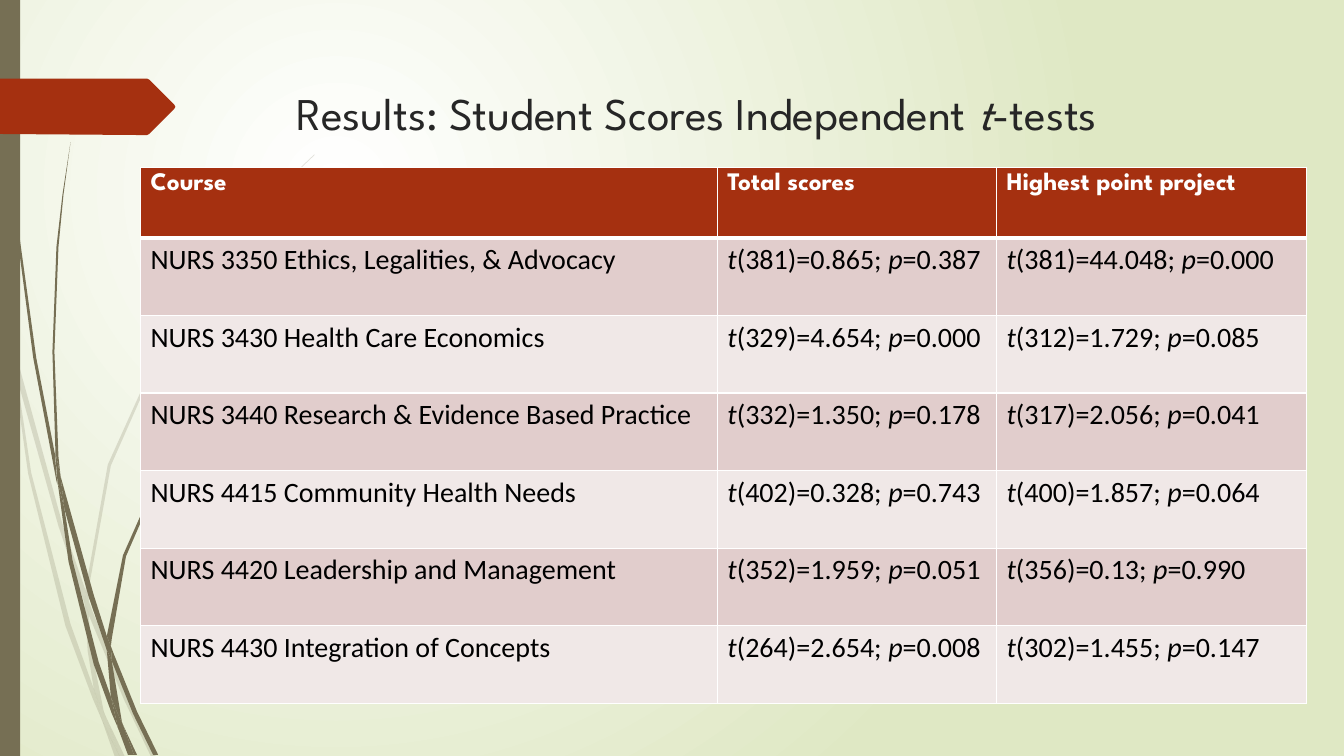
from lxml.etree import SubElement
from pptx import Presentation
from pptx.dml.color import RGBColor
from pptx.enum.shapes import MSO_SHAPE as SHAPE
from pptx.enum.text import MSO_ANCHOR as ANCHOR
from pptx.oxml.ns import qn
from pptx.util import Pt

OLIVE, RUST, WHITE = "766F54", "A53010", "FFFFFF"
BANDS = ["E1CDCC", "F0E8E7"]
HEADING_FONT, BODY_FONT = "League Spartan", "Calibri"
GRID = 0.72

PALE_BLADES = [
    [(11, 350), (9, 322), (0, 282), (0, 299), (10, 344)],
    [(58, 522), (84, 599), (85, 586), (62, 520), (14, 345), (17, 376)],
    [(92, 607), (88, 596), (88, 610), (123, 694), (150, 751), (155, 751), (127, 692)],
    [(119, 751), (124, 751), (105, 711)],
    [(93, 683), (70, 619), (31, 469), (17, 376), (11, 350), (28, 470), (65, 621),
     (92, 693), (101, 714), (99, 707)],
    [(84, 599), (87, 646), (93, 683), (96, 692), (105, 711), (103, 706), (91, 646),
     (88, 610), (88, 608)],
    [(88, 584), (110, 462), (160, 349), (229, 245), (268, 198), (290, 175), (312, 154),
     (312, 153), (289, 175), (268, 197), (228, 244), (158, 348), (107, 461), (85, 584),
     (85, 586), (88, 596)],
    [(101, 714), (114, 751), (119, 751)],
    [(88, 608), (88, 610), (88, 596), (85, 586), (84, 599)],
    [(96, 692), (93, 683), (99, 707), (101, 714), (119, 751), (105, 711)],
]

DARK_BLADES = [
    [(7, 110), (17, 233), (33, 355), (56, 477), (57, 481), (55, 457), (55, 453),
     (36, 355), (19, 232), (8, 109), (5, 48), (4, 0), (3, 0), (4, 48)],
    [(88, 592), (106, 645), (106, 633), (106, 631), (93, 590), (60, 472), (64, 505)],
    [(113, 649), (110, 641), (111, 656), (132, 708), (152, 749), (157, 749), (136, 706)],
    [(110, 691), (98, 657), (72, 556), (64, 505), (57, 477), (68, 557), (93, 659),
     (111, 708), (117, 722), (116, 717)],
    [(60, 472), (58, 453), (54, 349), (58, 245), (63, 193), (70, 141), (62, 193),
     (56, 245), (52, 349), (55, 449)],
    [(133, 749), (136, 749), (122, 719)],
    [(57, 477), (64, 505), (60, 472), (55, 449), (55, 453)],
    [(111, 633), (125, 552), (158, 476), (205, 406), (231, 374), (245, 359), (261, 344),
     (260, 344), (245, 358), (231, 373), (204, 405), (156, 474), (122, 551), (106, 631),
     (110, 641)],
    [(117, 722), (127, 749), (131, 749)],
    [(106, 645), (110, 691), (116, 706), (122, 719), (121, 716), (111, 656), (109, 651)],
    [(106, 645), (109, 651), (111, 656), (110, 641), (106, 631), (106, 633)],
    [(116, 706), (110, 691), (116, 717), (117, 722), (130, 749), (133, 749), (122, 719)],
]

PENTAGON = [(0, 78), (146, 78), (148, 79), (173, 104), (174, 106), (173, 108),
            (148, 133), (146, 134), (136, 134), (0, 133)]

HEADINGS = ["Course", "Total scores", "Highest point project"]
COURSES = [
    ("NURS 3350 Ethics, Legalities, & Advocacy",
     (381, "0.865", "0.387"), (381, "44.048", "0.000")),
    ("NURS 3430 Health Care Economics",
     (329, "4.654", "0.000"), (312, "1.729", "0.085")),
    ("NURS 3440 Research & Evidence Based Practice",
     (332, "1.350", "0.178"), (317, "2.056", "0.041")),
    ("NURS 4415 Community Health Needs",
     (402, "0.328", "0.743"), (400, "1.857", "0.064")),
    ("NURS 4420 Leadership and Management",
     (352, "1.959", "0.051"), (356, "0.13", "0.990")),
    ("NURS 4430 Integration of Concepts",
     (264, "2.654", "0.008"), (302, "1.455", "0.147")),
]


def rgb(value):
    return RGBColor.from_string(value)


def paint(sp, color, opacity=100):
    sp.shadow.inherit = False
    sp.fill.solid()
    sp.fill.fore_color.rgb = rgb(color)
    sp.line.fill.background()
    if opacity < 100:
        clr = sp.element.spPr.find(qn("a:solidFill")).find(qn("a:srgbClr"))
        SubElement(clr, qn("a:alpha"), val=str(opacity * 1000))


def add_outline(shapes, points, color, opacity=100):
    builder = shapes.build_freeform(*points[0], scale=Pt(GRID))
    builder.add_line_segments(points[1:])
    paint(builder.convert_to_shape(), color, opacity)


def add_grass(s, blades, opacity):
    group = s.shapes.add_group_shape()
    for points in blades:
        add_outline(group.shapes, points, OLIVE, opacity)


def set_background(s):
    fill = s.background.fill
    fill.gradient()
    for stop, color in zip(fill.gradient_stops, [WHITE, "DFE8C4"]):
        stop.color.rgb = rgb(color)
    grad = s.element.find(".//" + qn("a:gradFill"))
    grad.remove(grad.find(qn("a:lin")))
    circle = SubElement(grad, qn("a:path"), path="circle")
    SubElement(circle, qn("a:fillToRect"), l="50000", t="50000", r="100000", b="100000")


def write(tf, text, size, font, color, bold=False):
    p = tf.paragraphs[0]
    for i, part in enumerate(text.split("*")):
        if part:
            r = p.add_run()
            r.text = part
            r.font.size = Pt(size)
            r.font.name = font
            r.font.bold = bold
            r.font.italic = i % 2 == 1
            r.font.color.rgb = rgb(color)


def add_title(s):
    tf = s.shapes.add_textbox(Pt(204.5), Pt(49), Pt(702), Pt(100.8)).text_frame
    tf.word_wrap = True
    tf.vertical_anchor = ANCHOR.TOP
    tf.margin_top = Pt(12)
    write(tf, "Results: Student Scores Independent *t*-tests", 32.4, HEADING_FONT, "262626")


def set_borders(cell, widths):
    tc_pr = cell._tc.get_or_add_tcPr()
    for side, width in widths.items():
        ln = SubElement(tc_pr, qn("a:ln" + side), w=str(Pt(width)))
        SubElement(SubElement(ln, qn("a:solidFill")), qn("a:srgbClr"), val=WHITE)


def fill_cell(cell, text, fill, top, bottom, *style):
    set_borders(cell, {"L": 1, "R": 1, "T": top, "B": bottom})
    cell.fill.solid()
    cell.fill.fore_color.rgb = rgb(fill)
    write(cell.text_frame, text, *style)


def add_scores(s):
    widths = [412, 199.4, 221.5]
    heights = [50.4] + [55.44] * len(COURSES)
    table = s.shapes.add_table(len(heights), len(widths), Pt(100.4), Pt(119.5),
                               Pt(sum(widths)), Pt(sum(heights))).table
    for column, width in zip(table.columns, widths):
        column.width = Pt(width)
    for row, height in zip(table.rows, heights):
        row.height = Pt(height)
    for j, heading in enumerate(HEADINGS):
        fill_cell(table.cell(0, j), heading, RUST, 1, 3, 18, HEADING_FONT, WHITE, True)
    for i, (course, *tests) in enumerate(COURSES):
        texts = [course] + [f"*t*({df})={t}; *p*={p}" for df, t, p in tests]
        for j, text in enumerate(texts):
            fill_cell(table.cell(i + 1, j), text, BANDS[i % 2], 1 if i else 3, 1,
                      20, BODY_FONT, "000000")


def main():
    prs = Presentation()
    prs.slide_width, prs.slide_height = Pt(960), Pt(540)
    s = prs.slides.add_slide(prs.slide_layouts[6])
    set_background(s)
    add_grass(s, PALE_BLADES, 20)
    add_grass(s, DARK_BLADES, 100)
    paint(s.shapes.add_shape(SHAPE.RECTANGLE, 0, 0, Pt(14.4), Pt(540)), OLIVE)
    add_outline(s.shapes, PENTAGON, RUST)
    add_title(s)
    add_scores(s)
    prs.save("out.pptx")


if __name__ == "__main__":
    main()
